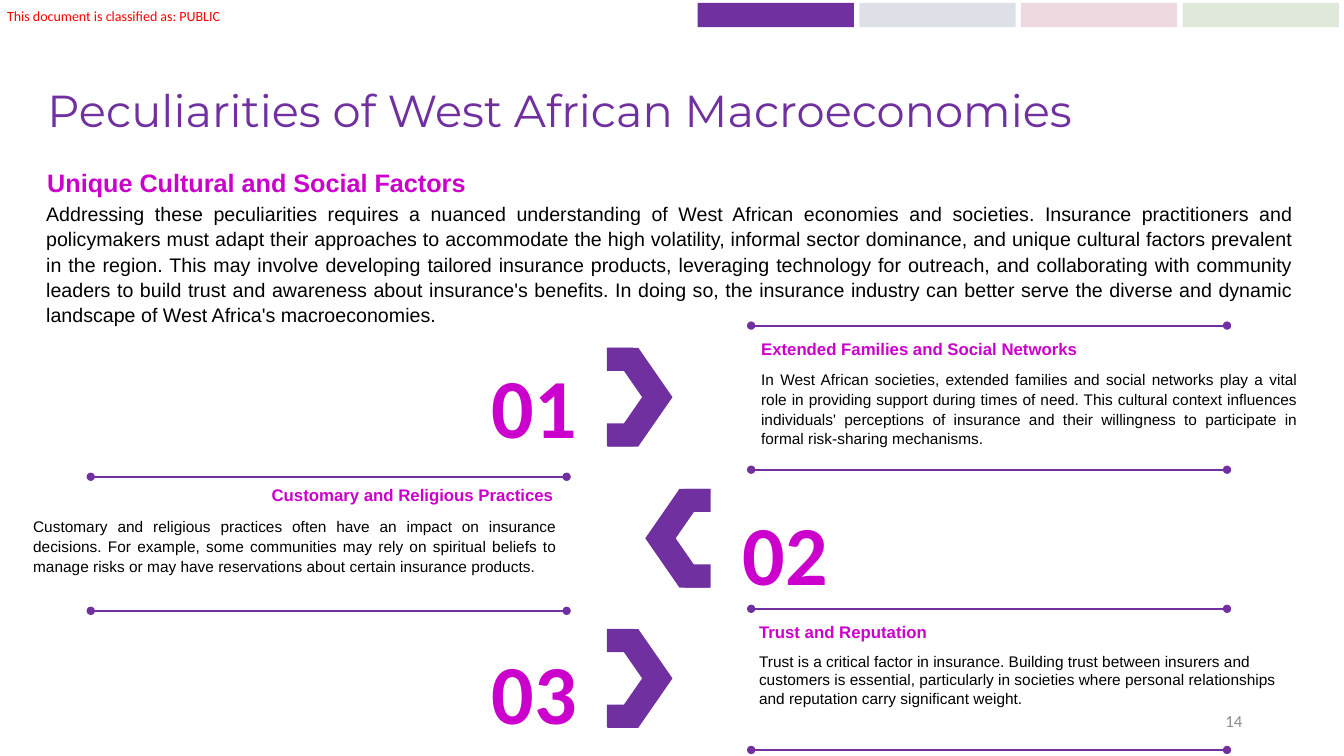
from dataclasses import dataclass

from lxml.etree import SubElement
from pptx import Presentation
from pptx.dml.color import RGBColor
from pptx.enum.shapes import MSO_CONNECTOR, MSO_SHAPE
from pptx.enum.text import MSO_ANCHOR, MSO_AUTO_SIZE, PP_ALIGN
from pptx.oxml.ns import qn
from pptx.util import Inches, Pt


@dataclass(frozen=True)
class Theme:
    purple: str = "7030A0"
    magenta: str = "CC00CC"
    black: str = "000000"
    red: str = "FF0000"
    grey: str = "8C8C8C"
    navy: str = "203864"
    crimson: str = "990033"
    green: str = "336600"
    title: int = 32
    subtitle: int = 18
    intro: int = 14
    heading: int = 12
    body: int = 11
    label: int = 10
    number: int = 60


T = Theme()
LEFT, RIGHT, CENTER, JUSTIFY = PP_ALIGN.LEFT, PP_ALIGN.RIGHT, PP_ALIGN.CENTER, PP_ALIGN.JUSTIFY

prs = Presentation()
prs.slide_width, prs.slide_height = Inches(13.33), Inches(7.5)
slide = prs.slides.add_slide(prs.slide_layouts[5])
shapes = slide.shapes


def write(text, box, sp=None, size=T.body, color=T.black, font="Arial", bold=False,
          align=LEFT, anchor=MSO_ANCHOR.TOP, spacing=1.0, after=0, inset=None):
    """Put one formatted paragraph in a new text box or in the given placeholder."""
    box = [Inches(v) for v in box]
    if sp is None:
        sp = shapes.add_textbox(*box)
    sp.left, sp.top, sp.width, sp.height = box
    tf = sp.text_frame
    tf.word_wrap, tf.auto_size, tf.vertical_anchor = True, MSO_AUTO_SIZE.NONE, anchor
    if inset is not None:
        tf.margin_left = tf.margin_top = tf.margin_right = tf.margin_bottom = Inches(inset)
    p = tf.paragraphs[0]
    p.alignment, p.line_spacing, p.space_after = align, spacing, Pt(after)
    r = p.add_run()
    r.text = text
    r.font.size, r.font.name, r.font.bold = Pt(size), font, bold
    r.font.color.rgb = RGBColor.from_string(color)


def draw(kind, box, color=T.purple, rotation=0, opacity=100):
    """Add a plain filled shape without outline."""
    sp = shapes.add_shape(kind, *[Inches(v) for v in box])
    sp.shadow.inherit = False
    sp.fill.solid()
    sp.fill.fore_color.rgb = RGBColor.from_string(color)
    sp.line.fill.background()
    sp.rotation = rotation
    if opacity < 100:
        clr = sp.fill._xPr.find(".//" + qn("a:srgbClr"))
        SubElement(clr, qn("a:alpha"), val=str(opacity * 1000))
    return sp


# Classification label and top colour bars
write("This document is classified as: PUBLIC", (0.07, 0.07, 2.6, 0.17),
      size=T.label, color=T.red, font="Calibri", inset=0)
bars = [(T.purple, 100), (T.navy, 15), (T.crimson, 15), (T.green, 15)]
for i, (color, opacity) in enumerate(bars):
    draw(MSO_SHAPE.RECTANGLE, (6.92 + 1.603 * i, 0.03, 1.55, 0.24), color, opacity=opacity)

# Title and introduction
write("Peculiarities of West African Macroeconomies", (0.37, 0.4, 12.6, 1.45),
      sp=shapes.title, size=T.title, color=T.purple, font="Montserrat",
      anchor=MSO_ANCHOR.MIDDLE, spacing=0.9)
write("Unique Cultural and Social Factors", (0.37, 1.59, 6.68, 0.4), size=T.subtitle,
      color=T.magenta, bold=True, align=JUSTIFY, spacing=1.07, after=8)
write("Addressing these peculiarities requires a nuanced understanding of West African "
      "economies and societies. Insurance practitioners and policymakers must adapt their "
      "approaches to accommodate the high volatility, informal sector dominance, and unique "
      "cultural factors prevalent in the region. This may involve developing tailored "
      "insurance products, leveraging technology for outreach, and collaborating with "
      "community leaders to build trust and awareness about insurance's benefits. In doing "
      "so, the insurance industry can better serve the diverse and dynamic landscape of West "
      "Africa's macroeconomies.", (0.36, 1.94, 12.57, 1.34), size=T.intro,
      align=JUSTIFY, spacing=1.07, after=8)

# Numbered arrows: number, arrow top, number position, points left
arrows = [("01", 3.45, (4.73, 3.47), False),
          ("02", 4.85, (7.22, 4.93), True),
          ("03", 6.24, (4.73, 6.3), False)]
for number, top, (x, y), points_left in arrows:
    chevron_x, arm_x, turn = (6.4, 6.79, 180) if points_left else (6.03, 6.02, 0)
    chevron = draw(MSO_SHAPE.CHEVRON, (chevron_x, top, 0.64, 0.98), rotation=turn)
    chevron.adjustments[0] = 0.53
    for arm_y in (top, top + 0.75):
        draw(MSO_SHAPE.RECTANGLE, (arm_x, arm_y, 0.26, 0.23))
    write(number, (x, y, 1.14, 1.11), size=T.number, color=T.magenta,
          font="Calibri", bold=True, align=CENTER)

# Factor texts: heading, its box and alignment, then body, its box and format
justified = dict(align=JUSTIFY, spacing=1.07, after=8)
factors = [
    ("Extended Families and Social Networks", (7.45, 3.31, 5.48, 0.3), LEFT,
     "In West African societies, extended families and social networks play a vital role in "
     "providing support during times of need. This cultural context influences individuals' "
     "perceptions of insurance and their willingness to participate in formal risk-sharing "
     "mechanisms.", (7.45, 3.61, 5.52, 0.88), justified),
    ("Customary and Religious Practices", (1.05, 4.76, 4.54, 0.3), RIGHT,
     "Customary and religious practices often have an impact on insurance decisions. For "
     "example, some communities may rely on spiritual beliefs to manage risks or may have "
     "reservations about certain insurance products.", (0.23, 5.07, 5.39, 0.69), justified),
    ("Trust and Reputation", (7.43, 6.12, 4.59, 0.3), LEFT,
     "Trust is a critical factor in insurance. Building trust between insurers and customers "
     "is essential, particularly in societies where personal relationships and reputation "
     "carry significant weight.", (7.43, 6.42, 5.5, 0.66), {}),
]
for heading, heading_box, align, body, body_box, body_format in factors:
    write(heading, heading_box, size=T.heading, color=T.magenta, bold=True, align=align)
    write(body, body_box, **body_format)

# Divider lines with round ends
dividers = [(7.45, 3.23), (7.45, 4.66), (7.45, 6.04), (7.45, 7.44), (0.9, 4.73), (0.9, 6.06)]
for x, y in dividers:
    line = shapes.add_connector(MSO_CONNECTOR.STRAIGHT, Inches(x), Inches(y),
                                Inches(x + 4.72), Inches(y))
    line.line.color.rgb = RGBColor.from_string(T.purple)
    line.line.width = Pt(1.5)
    ln = line.line._get_or_add_ln()
    for end in ("a:headEnd", "a:tailEnd"):
        SubElement(ln, qn(end), type="oval")
    SubElement(line._element.spPr, qn("a:effectLst"))

# Page number
write("14", (9.42, 6.95, 3, 0.4), size=T.heading, color=T.grey, font="Calibri",
      align=RIGHT, anchor=MSO_ANCHOR.MIDDLE)

prs.save("out.pptx")
